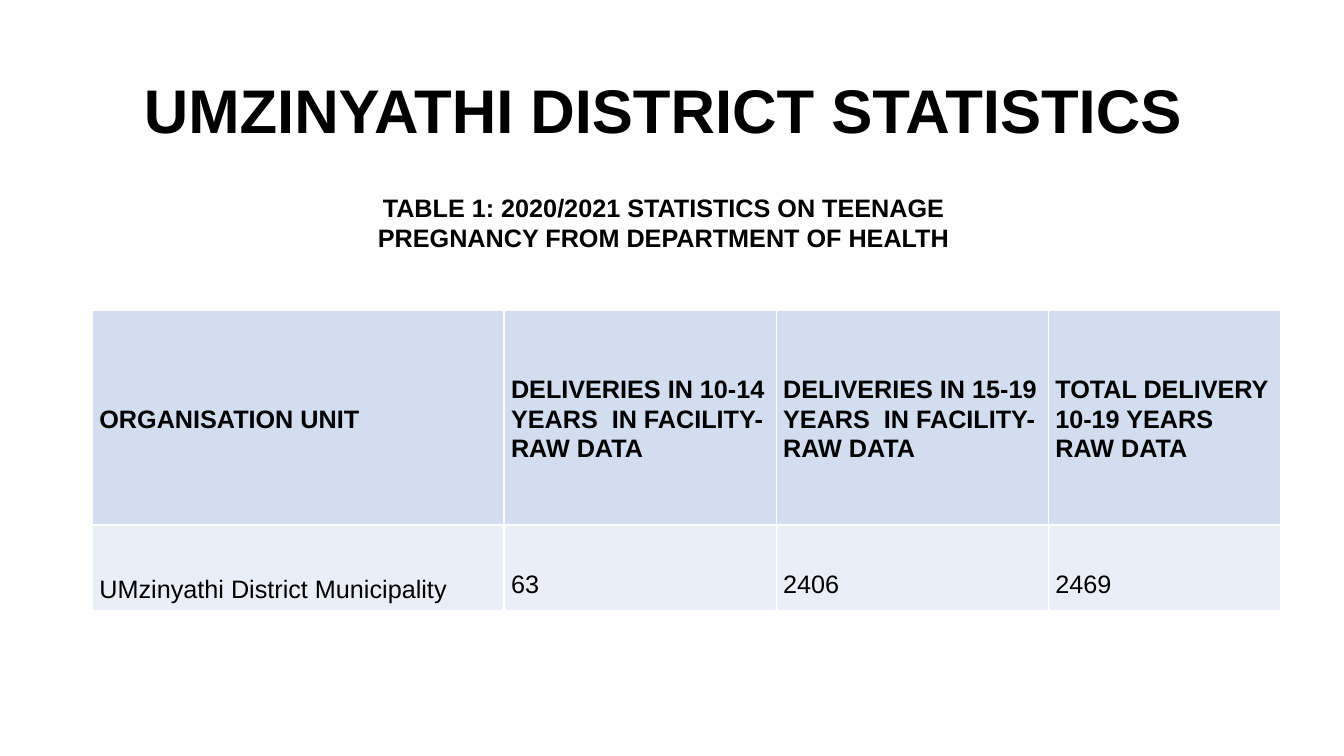
from dataclasses import dataclass

from lxml import etree
from pptx import Presentation
from pptx.dml.color import RGBColor
from pptx.enum.text import MSO_ANCHOR, MSO_AUTO_SIZE, PP_ALIGN
from pptx.oxml.ns import qn
from pptx.util import Inches, Pt

CENTER, LEFT = PP_ALIGN.CENTER, PP_ALIGN.LEFT
TOP, MIDDLE = MSO_ANCHOR.TOP, MSO_ANCHOR.MIDDLE
GROW = MSO_AUTO_SIZE.SHAPE_TO_FIT_TEXT
TITLE_ONLY = 5
GRID_COLUMNS, GRID_ROWS = 160, 90


@dataclass(frozen=True)
class Theme:
    """Colours, font and type sizes of the slide."""

    font: str = "Arial"
    ink: str = "000000"
    border: str = "FFFFFF"
    header_fill: str = "D2DEEF"
    body_fill: str = "EAEFF7"
    title_size: int = 44
    text_size: int = 18
    border_width: int = 1


class SlideBuilder:
    """Places styled elements on a slide by grid columns and rows."""

    def __init__(self, presentation, theme):
        """Add a slide with a title and work out its grid."""
        self.theme = theme
        self.slide = presentation.slides.add_slide(presentation.slide_layouts[TITLE_ONLY])
        self.column = presentation.slide_width / GRID_COLUMNS
        self.row = presentation.slide_height / GRID_ROWS

    def box(self, left, top, width, height):
        """Turn grid units into slide lengths."""
        return (round(left * self.column), round(top * self.row),
                round(width * self.column), round(height * self.row))

    def set_text(self, frame, text, size, bold, align, spacing=1.0):
        """Fill a text frame with one styled paragraph."""
        frame.word_wrap = True
        paragraph = frame.paragraphs[0]
        paragraph.text = text
        paragraph.alignment = align
        paragraph.line_spacing = spacing
        paragraph.font.name = self.theme.font
        paragraph.font.size = Pt(size)
        paragraph.font.bold = bold
        paragraph.font.color.rgb = RGBColor.from_string(self.theme.ink)

    def title(self, text, *place):
        """Move and fill the title placeholder."""
        heading = self.slide.shapes.title
        heading.left, heading.top, heading.width, heading.height = self.box(*place)
        heading.text_frame.vertical_anchor = MIDDLE
        self.set_text(heading.text_frame, text, self.theme.title_size, True, CENTER, 0.9)

    def caption(self, text, *place):
        """Add a centred bold caption."""
        frame = self.slide.shapes.add_textbox(*self.box(*place)).text_frame
        self.set_text(frame, text, self.theme.text_size, True, CENTER)
        frame.auto_size = GROW

    def borders(self, cell):
        """Draw the four borders of a table cell."""
        properties = cell._tc.get_or_add_tcPr()
        for position, side in enumerate(("a:lnL", "a:lnR", "a:lnT", "a:lnB")):
            line = etree.Element(qn(side), w=str(Pt(self.theme.border_width)))
            fill = etree.SubElement(line, qn("a:solidFill"))
            etree.SubElement(fill, qn("a:srgbClr"), val=self.theme.border)
            properties.insert(position, line)

    def cell(self, cell, text, header, top_inset):
        """Style and fill one table cell."""
        cell.margin_left = cell.margin_right = Inches(0.07)
        cell.margin_top, cell.margin_bottom = Inches(top_inset), 0
        cell.vertical_anchor = MIDDLE if header else TOP
        cell.fill.solid()
        fill = self.theme.header_fill if header else self.theme.body_fill
        cell.fill.fore_color.rgb = RGBColor.from_string(fill)
        self.set_text(cell.text_frame, text, self.theme.text_size, header, LEFT, 1.06)
        self.borders(cell)

    def table(self, records, left, top, widths, heights, label_inset, value_inset):
        """Add a table with a header row and a label column."""
        place = self.box(left, top, sum(widths), sum(heights))
        table = self.slide.shapes.add_table(len(records), len(widths), *place).table
        table.first_row = table.horz_banding = False
        for column, width in zip(table.columns, widths):
            column.width = round(width * self.column)
        for row, height in zip(table.rows, heights):
            row.height = round(height * self.row)
        for row_index, record in enumerate(records):
            for column_index, text in enumerate(record):
                header = row_index == 0
                body_inset = value_inset if column_index else label_inset
                self.cell(table.cell(row_index, column_index), text, header,
                          0.01 if header else body_inset)


def main():
    """Build and save the district statistics slide."""
    presentation = Presentation()
    presentation.slide_width, presentation.slide_height = Inches(13.33), Inches(7.5)
    statistics = SlideBuilder(presentation, Theme())
    statistics.title("UMZINYATHI DISTRICT STATISTICS ", 11, 4.8, 138, 17.4)
    statistics.caption(
        "TABLE 1: 2020/2021 STATISTICS ON TEENAGE PREGNANCY FROM DEPARTMENT OF HEALTH",
        39, 22.3, 80, 8.5)
    deliveries = [
        ("ORGANISATION UNIT",
         "DELIVERIES IN 10-14 YEARS  IN FACILITY-RAW DATA",
         "DELIVERIES IN 15-19 YEARS  IN FACILITY-RAW DATA",
         "TOTAL DELIVERY 10-19 YEARS RAW DATA"),
        ("UMzinyathi District Municipality", "63", "2406", "2469"),
    ]
    statistics.table(deliveries, 11, 37, widths=(49, 32.4, 32.4, 27.6),
                     heights=(25.5, 10.2), label_inset=0.49, value_inset=0.44)
    presentation.save("out.pptx")


if __name__ == "__main__":
    main()
